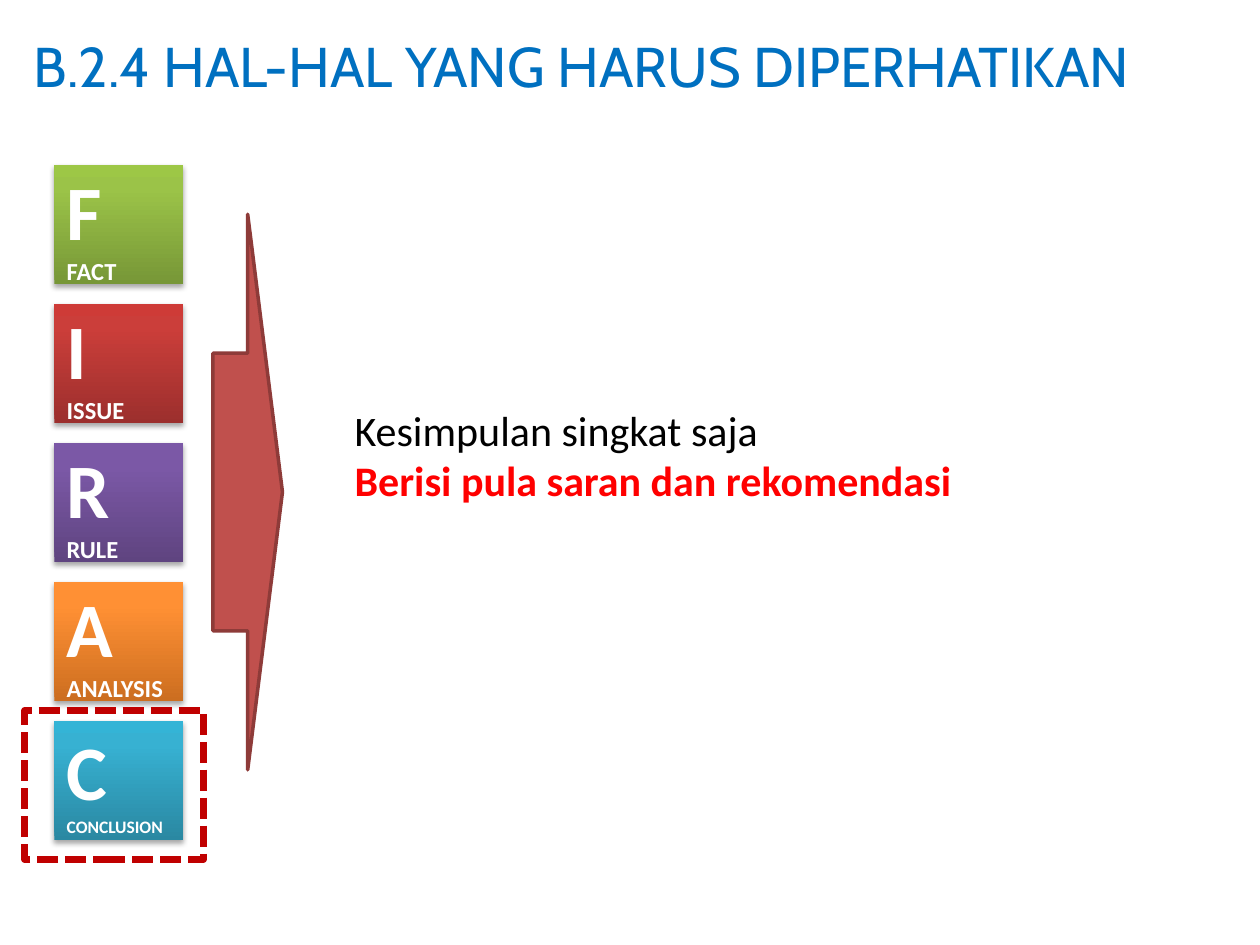
from dataclasses import dataclass

from lxml.etree import SubElement
from pptx import Presentation
from pptx.dml.color import RGBColor
from pptx.enum.dml import MSO_LINE
from pptx.enum.shapes import MSO_SHAPE
from pptx.enum.text import MSO_ANCHOR, PP_ALIGN
from pptx.oxml.ns import qn
from pptx.shapes.autoshape import Shape
from pptx.slide import Slide
from pptx.util import Pt


@dataclass(frozen=True)
class Box:
    left: float
    top: float
    width: float
    height: float


@dataclass(frozen=True)
class Line:
    text: str
    size: float
    color: str
    font: str = "Calibri"
    bold: bool = False


@dataclass(frozen=True)
class Tile:
    letter: str
    word: str
    colors: tuple[str, str, str]  # bottom to top
    word_size: float = 14


TILES = [
    Tile("F", "FACT", ("779737", "9BC348", "9DC746")),
    Tile("I", "ISSUE", ("9C2F2D", "CB3E3A", "CE3B37")),
    Tile("R", "RULE", ("5F4480", "7B58A6", "7C57A8")),
    Tile("A", "ANALYSIS", ("CC6E20", "FF9034", "FF9136")),
    Tile("C", "CONCLUSION", ("2A88A2", "37B1D2", "34B4D6"), 10),
]
FIRST_TILE = Box(31, 94.3, 73.5, 68)
TILE_PITCH = 79.4
GRADIENT_POSITIONS = (0, 80, 100)


def rgb(color: str) -> RGBColor:
    return RGBColor.from_string(color)


def lengths(box: Box) -> tuple[Pt, Pt, Pt, Pt]:
    return Pt(box.left), Pt(box.top), Pt(box.width), Pt(box.height)


def write_lines(shape: Shape, lines: list[Line], anchor: MSO_ANCHOR) -> None:
    frame = shape.text_frame
    frame.word_wrap = True
    frame.vertical_anchor = anchor
    for index, line in enumerate(lines):
        paragraph = frame.add_paragraph() if index else frame.paragraphs[0]
        paragraph.alignment = PP_ALIGN.LEFT
        run = paragraph.add_run()
        run.text = line.text
        run.font.name = line.font
        run.font.size = Pt(line.size)
        run.font.bold = line.bold
        run.font.color.rgb = rgb(line.color)


def add_text(slide: Slide, box: Box, lines: list[Line], anchor: MSO_ANCHOR) -> None:
    write_lines(slide.shapes.add_textbox(*lengths(box)), lines, anchor)


def add_outline(slide: Slide, kind: MSO_SHAPE, box: Box, color: str, width: float) -> Shape:
    shape = slide.shapes.add_shape(kind, *lengths(box))
    shape.shadow.inherit = False
    shape.fill.background()
    shape.line.color.rgb = rgb(color)
    shape.line.width = Pt(width)
    return shape


def set_gradient(shape: Shape, colors: tuple[str, str, str]) -> None:
    shape.fill.gradient()
    gradient = shape.element.spPr.find(qn("a:gradFill"))
    stops = gradient.find(qn("a:gsLst"))
    for stop in list(stops):
        stops.remove(stop)
    for position, color in zip(GRADIENT_POSITIONS, colors):
        stop = SubElement(stops, qn("a:gs"), pos=str(position * 1000))
        SubElement(stop, qn("a:srgbClr"), val=color)
    shape.fill.gradient_angle = 90


def set_shadow(shape: Shape) -> None:
    shape.shadow.inherit = False
    effects = shape.element.spPr.find(qn("a:effectLst"))
    shadow = SubElement(
        effects, qn("a:outerShdw"), blurRad=str(Pt(3.1)), dist=str(Pt(1.8)),
        dir="5400000", rotWithShape="0",
    )
    color = SubElement(shadow, qn("a:srgbClr"), val="000000")
    SubElement(color, qn("a:alpha"), val="35000")


def add_tile(slide: Slide, tile: Tile, box: Box) -> None:
    shape = slide.shapes.add_shape(MSO_SHAPE.RECTANGLE, *lengths(box))
    set_gradient(shape, tile.colors)
    shape.line.fill.background()
    set_shadow(shape)
    lines = [
        Line(tile.letter, 44, "FFFFFF", bold=True),
        Line(tile.word, tile.word_size, "FFFFFF", bold=True),
    ]
    write_lines(shape, lines, MSO_ANCHOR.MIDDLE)


def main() -> None:
    presentation = Presentation()
    presentation.slide_width, presentation.slide_height = Pt(720), Pt(540)
    slide = presentation.slides.add_slide(presentation.slide_layouts[6])

    # Title
    title = Line("B.2.4 HAL-HAL YANG HARUS DIPERHATIKAN", 32, "0070C0", "Cabin")
    add_text(slide, Box(12.3, -8, 671, 90), [title], MSO_ANCHOR.MIDDLE)

    # Column of FIRAC tiles
    for index, tile in enumerate(TILES):
        top = FIRST_TILE.top + index * TILE_PITCH
        add_tile(slide, tile, Box(FIRST_TILE.left, top, FIRST_TILE.width, FIRST_TILE.height))

    # Arrow towards the explanation
    arrow = add_outline(slide, MSO_SHAPE.RIGHT_ARROW, Box(121.7, 122.4, 39.7, 317.5), "8E3B39", 2)
    arrow.fill.solid()
    arrow.fill.fore_color.rgb = rgb("C0504D")

    # Dashed frame around the conclusion tile
    frame = add_outline(slide, MSO_SHAPE.RECTANGLE, Box(14.2, 406, 102, 85), "C00000", 4)
    frame.line.dash_style = MSO_LINE.SQUARE_DOT

    # Explanation
    explanation = [
        Line("Kesimpulan singkat saja", 24, "000000"),
        Line("Berisi pula saran dan rekomendasi", 24, "FF0000", bold=True),
    ]
    add_text(slide, Box(195.6, 227.5, 471, 65.5), explanation, MSO_ANCHOR.TOP)

    presentation.save("out.pptx")


if __name__ == "__main__":
    main()
